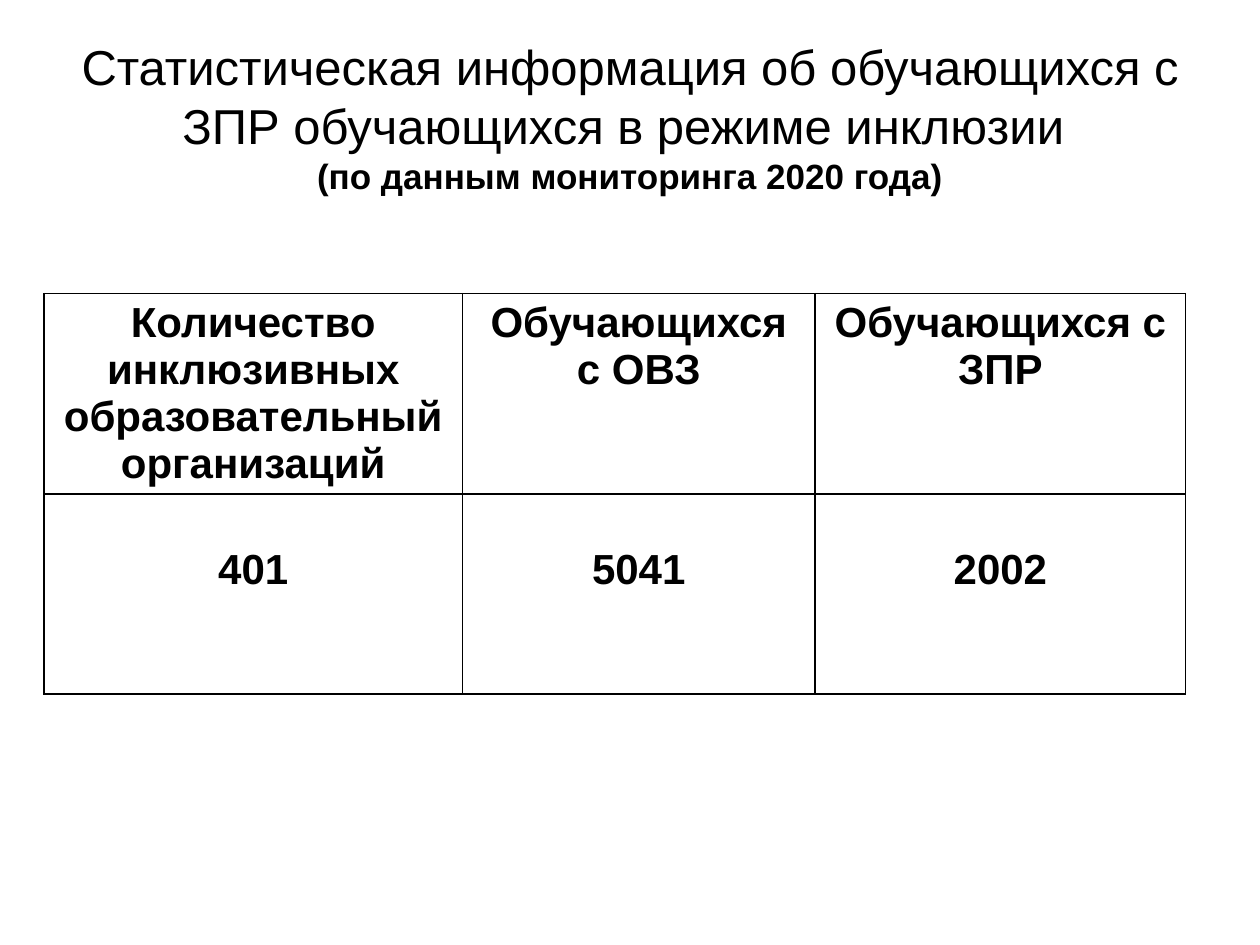
import pptx
import pptx.util
import pptx.dml.color
import pptx.enum.text
import pptx.oxml
import pptx.oxml.ns
import lxml.etree

Inches = pptx.util.Inches
Pt = pptx.util.Pt
INK = "000000"
PAPER = "FFFFFF"


def color(code):
    return pptx.dml.color.RGBColor.from_string(code)


def style(font, size, bold):
    font.name = "Arial"
    font.size = Pt(size)
    font.bold = bold
    font.color.rgb = color(INK)


def center(para):
    para.alignment = pptx.enum.text.PP_ALIGN.CENTER


def add_title(slide, parts):
    title = slide.shapes.title
    title.left, title.top = Inches(0.5), Inches(0.3)
    title.width, title.height = Inches(9), Inches(1.25)
    frame = title.text_frame
    frame.word_wrap = True
    frame.auto_size = pptx.enum.text.MSO_AUTO_SIZE.NONE
    frame.vertical_anchor = pptx.enum.text.MSO_ANCHOR.MIDDLE
    para = frame.paragraphs[0]
    center(para)
    style(para.font, parts[0][1], False)
    for index, (text, size, bold) in enumerate(parts):
        if index:
            para.add_line_break()
        run = para.add_run()
        run.text = text
        style(run.font, size, bold)


def add_edges(cell):
    props = cell._tc.get_or_add_tcPr()
    space = pptx.oxml.ns.nsdecls("a")
    for index, side in enumerate(("lnL", "lnR", "lnT", "lnB")):
        edge = pptx.oxml.parse_xml(
            f'<a:{side} {space} w="{Pt(1)}"><a:solidFill>'
            f'<a:srgbClr val="{INK}"/></a:solidFill></a:{side}>')
        props.insert(index, edge)


def fill_cell(cell, text, top):
    cell.fill.solid()
    cell.fill.fore_color.rgb = color(PAPER)
    cell.margin_top = Inches(top)
    cell.text = text
    para = cell.text_frame.paragraphs[0]
    center(para)
    style(para.font, 24, True)
    add_edges(cell)


def add_grid(slide, rows, widths, height, tops):
    frame = slide.shapes.add_table(
        len(rows), len(widths), Inches(0.35), Inches(2.33),
        Inches(sum(widths)), Inches(height * len(rows)))
    table = frame.table
    table.first_row = False
    table.horz_banding = False
    for column, width in zip(table.columns, widths):
        column.width = Inches(width)
    for r, (row, top) in enumerate(zip(rows, tops)):
        table.rows[r].height = Inches(height)
        for c, text in enumerate(row):
            fill_cell(table.cell(r, c), text, top)


def main():
    deck = pptx.Presentation()
    deck.slide_width, deck.slide_height = Inches(10), Inches(7.5)
    slide = deck.slides.add_slide(deck.slide_layouts[5])
    add_title(slide, [
        ("Статистическая информация об обучающихся с ЗПР обучающихся "
         "в режиме инклюзии ", 28, False),
        ("(по данным мониторинга 2020 года)", 20, True),
    ])
    rows = [
        ("Количество инклюзивных образовательный организаций",
         "Обучающихся с ОВЗ", "Обучающихся с ЗПР"),
        ("401", "5041", "2002"),
    ]
    add_grid(slide, rows, (3.32, 2.8, 2.94), 1.59, (0.05, 0.42))
    deck.save("out.pptx")


if __name__ == "__main__":
    main()
